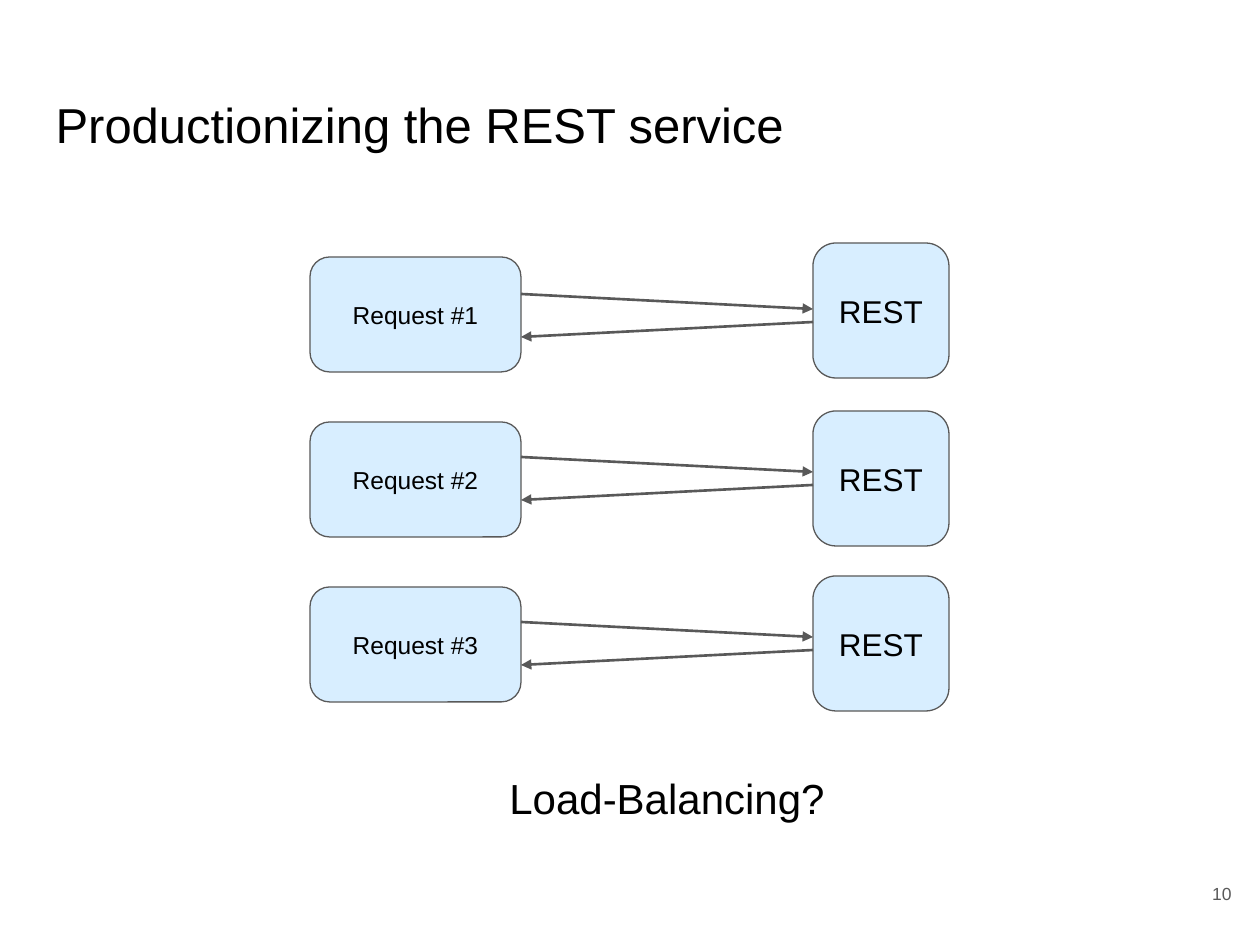
from dataclasses import dataclass

from lxml import etree
from pptx import Presentation
from pptx.dml.color import RGBColor
from pptx.enum.shapes import MSO_CONNECTOR, MSO_SHAPE
from pptx.enum.text import MSO_ANCHOR, MSO_AUTO_SIZE, PP_ALIGN
from pptx.oxml.ns import qn
from pptx.util import Emu, Pt

STRAIGHT = MSO_CONNECTOR.STRAIGHT
ROUNDED = MSO_SHAPE.ROUNDED_RECTANGLE
TOP, MIDDLE = MSO_ANCHOR.TOP, MSO_ANCHOR.MIDDLE
LEFT, CENTER, RIGHT = PP_ALIGN.LEFT, PP_ALIGN.CENTER, PP_ALIGN.RIGHT
NO_AUTOFIT = MSO_AUTO_SIZE.NONE

PX_PER_INCH = 126
FONT = "Arial"
COLORS = {"text": "000000", "node": "D8EEFF", "line": "595959"}

REQUEST_LEFT, REQUEST_WIDTH, REQUEST_HEIGHT = 310, 211, 115
REST_LEFT, REST_WIDTH, REST_HEIGHT = 813, 136, 135
ARROW_DROP, REPLY_OFFSET = 15, 28


@dataclass(frozen=True)
class Area:
    left: int
    top: int
    width: int
    height: int


@dataclass(frozen=True)
class Label:
    text: str
    size: int
    align: PP_ALIGN = CENTER
    anchor: MSO_ANCHOR = MIDDLE
    color: str = "text"


@dataclass(frozen=True)
class Exchange:
    request: str
    request_top: int
    rest_top: int
    arrow_top: int


EXCHANGES = [
    Exchange("Request #1", 257, 243, 294),
    Exchange("Request #2", 422, 411, 457),
    Exchange("Request #3", 587, 576, 622),
]


def px(length: int) -> Emu:
    return Emu(round(length * 914400 / PX_PER_INCH))


def color(name: str) -> RGBColor:
    return RGBColor.from_string(COLORS[name])


def place(shape, area: Area) -> None:
    shape.left, shape.top = px(area.left), px(area.top)
    shape.width, shape.height = px(area.width), px(area.height)


def write(shape, label: Label) -> None:
    frame = shape.text_frame
    frame.word_wrap = True
    frame.auto_size = NO_AUTOFIT
    frame.vertical_anchor = label.anchor
    frame.margin_left = frame.margin_right = Pt(7.2)
    frame.margin_top = frame.margin_bottom = Pt(7.2)
    para = frame.paragraphs[0]
    para.alignment = label.align
    span = para.add_run()
    span.text = label.text
    span.font.name = FONT
    span.font.size = Pt(label.size)
    span.font.color.rgb = color(label.color)


def add_text(page, area: Area, label: Label) -> None:
    box = page.shapes.add_textbox(0, 0, 0, 0)
    place(box, area)
    write(box, label)


def add_node(page, area: Area, label: Label) -> None:
    node = page.shapes.add_shape(ROUNDED, 0, 0, 0, 0)
    place(node, area)
    node.adjustments[0] = 0.17
    node.shadow.inherit = False
    node.fill.solid()
    node.fill.fore_color.rgb = color("node")
    node.line.color.rgb = color("line")
    node.line.width = Pt(0.75)
    write(node, label)


def add_arrow(page, start_x: int, start_y: int, end_x: int, end_y: int) -> None:
    arrow = page.shapes.add_connector(
        STRAIGHT, px(start_x), px(start_y), px(end_x), px(end_y)
    )
    arrow.line.color.rgb = color("line")
    arrow.line.width = Pt(1.5)
    outline = arrow.line._get_or_add_ln()
    etree.SubElement(outline, qn("a:tailEnd"), type="triangle")
    etree.SubElement(arrow._element.spPr, qn("a:effectLst"))


def add_exchange(page, exchange: Exchange) -> None:
    request = Area(REQUEST_LEFT, exchange.request_top, REQUEST_WIDTH, REQUEST_HEIGHT)
    rest = Area(REST_LEFT, exchange.rest_top, REST_WIDTH, REST_HEIGHT)
    add_node(page, request, Label(exchange.request, 14))
    add_node(page, rest, Label("REST", 18))
    near = REQUEST_LEFT + REQUEST_WIDTH
    call = exchange.arrow_top
    reply = call + REPLY_OFFSET
    add_arrow(page, near, call, REST_LEFT, call + ARROW_DROP)
    add_arrow(page, REST_LEFT, reply, near, reply + ARROW_DROP)


def main() -> None:
    deck = Presentation()
    deck.slide_width, deck.slide_height = px(1260), px(945)
    page = deck.slides.add_slide(deck.slide_layouts[5])
    title = page.shapes.title
    place(title, Area(43, 82, 1174, 105))
    write(title, Label("Productionizing the REST service", 28, LEFT, TOP))
    for exchange in EXCHANGES:
        add_exchange(page, exchange)
    add_text(page, Area(488, 760, 358, 84), Label("Load-Balancing?", 24, anchor=TOP))
    add_text(page, Area(1168, 857, 76, 72), Label("10", 10, RIGHT, color="line"))
    deck.save("out.pptx")


if __name__ == "__main__":
    main()
